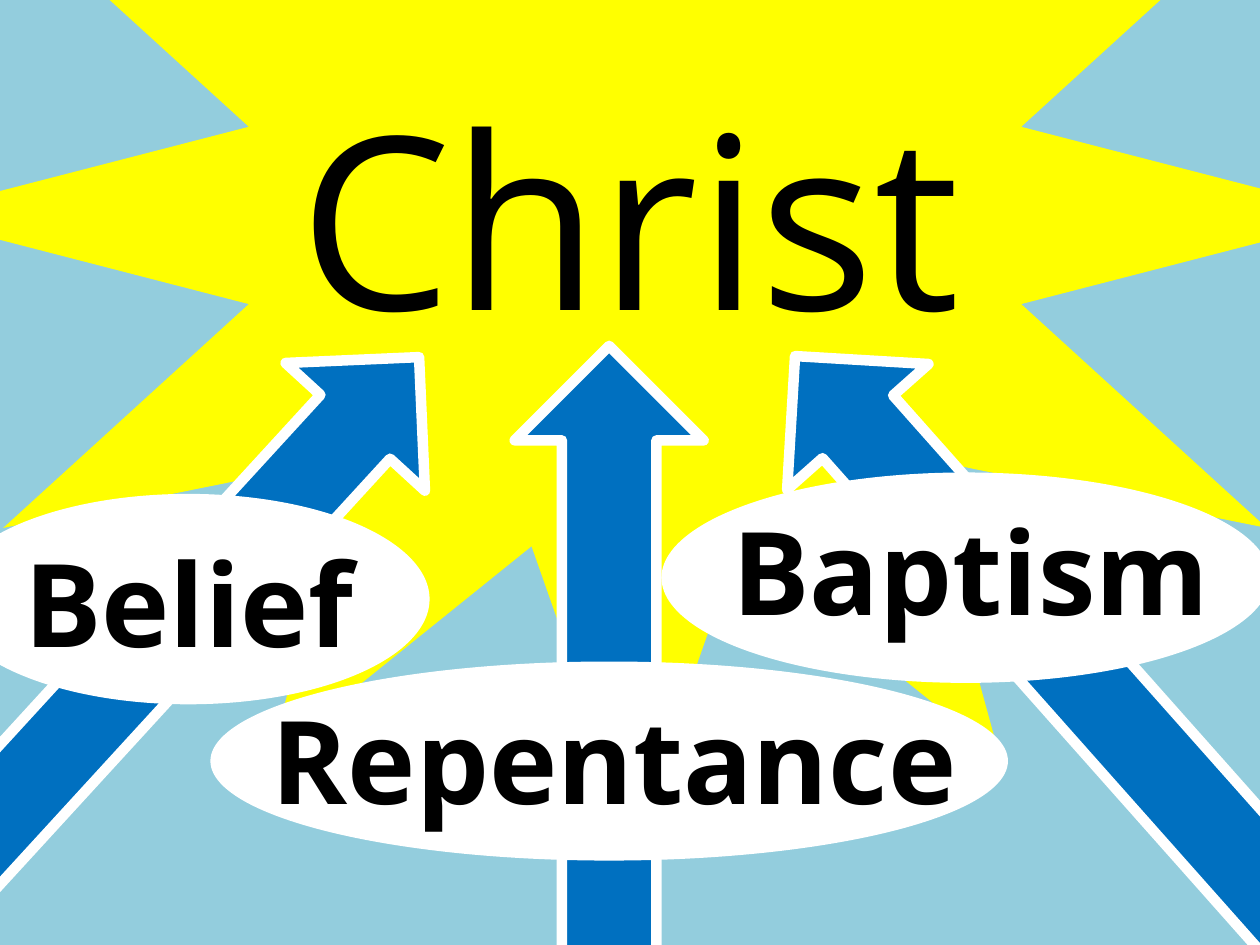
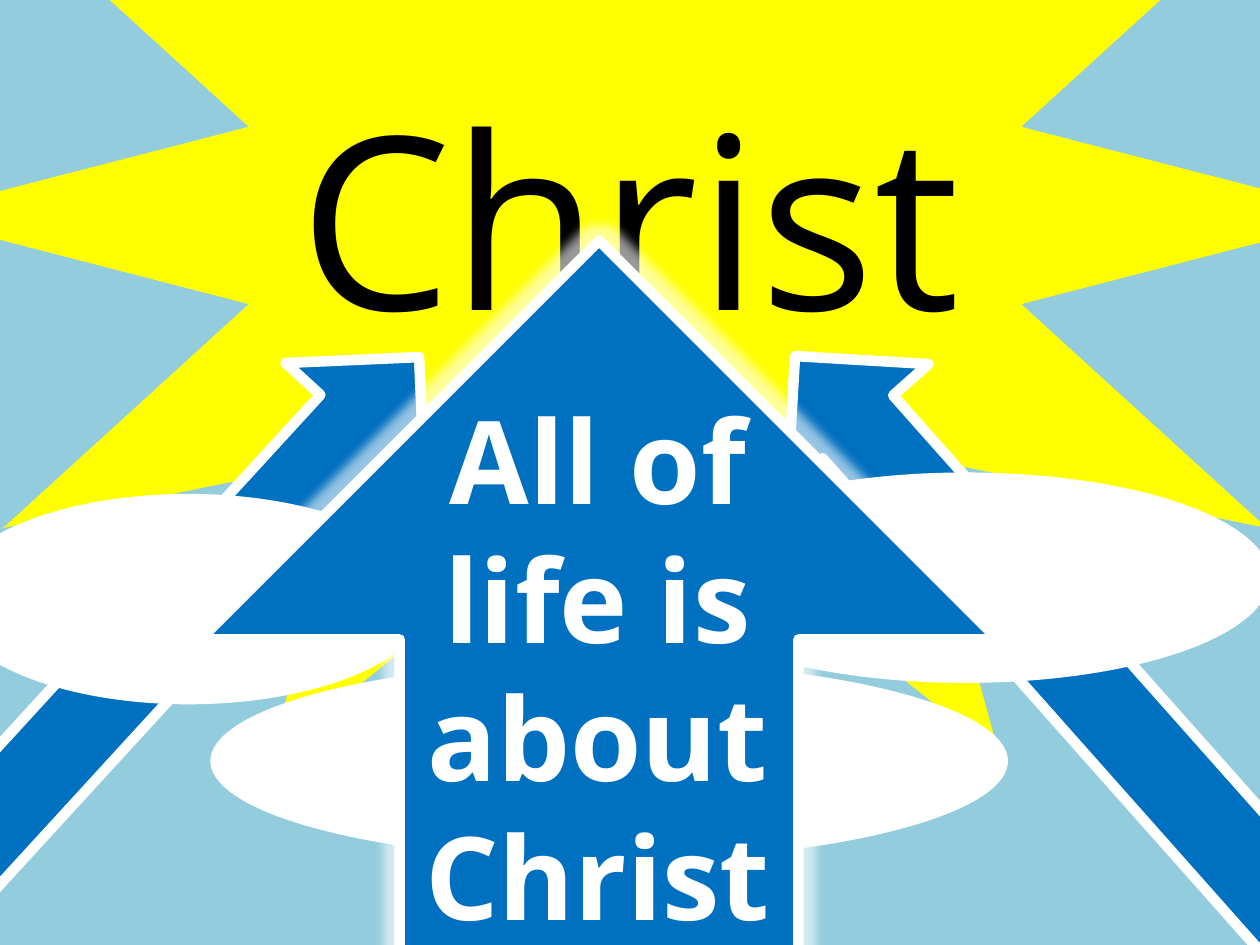
from dataclasses import dataclass

from lxml import etree
from pptx import Presentation
from pptx.dml.color import RGBColor
from pptx.enum.shapes import MSO_SHAPE
from pptx.enum.text import MSO_ANCHOR, MSO_AUTO_SIZE, PP_ALIGN
from pptx.oxml.ns import qn
from pptx.shapes.autoshape import Shape
from pptx.shapes.shapetree import GroupShapes, SlideShapes
from pptx.slide import Slide
from pptx.util import Inches, Pt

COLOURS = {
    "sky": "93CDDD",
    "sun": "FFFF00",
    "arrow": "0070C0",
    "white": "FFFFFF",
    "black": "000000",
}
FONT = "Open Sans"
TITLE_ONLY = 5
Canvas = SlideShapes | GroupShapes


@dataclass(frozen=True)
class Box:
    left: float
    top: float
    width: float
    height: float

    def lengths(self) -> tuple:
        return tuple(Inches(n) for n in (self.left, self.top, self.width, self.height))


@dataclass(frozen=True)
class Arrow:
    box: Box
    rotation: float


@dataclass(frozen=True)
class Step:
    """One of the ways to Christ: an arrow with an oval label on it."""
    word: str
    arrow: Arrow
    oval: Box
    label: Box


STEPS = (
    Step("Belief", Arrow(Box(-1.39, 4.16, 5.63, 1.5), 312.5),
         Box(-0.42, 3.92, 3.83, 1.67), Box(-1.25, 4.17, 5.5, 1.21)),
    Step("Repentance", Arrow(Box(2.21, 4.62, 5.25, 1.5), 270),
         Box(1.67, 5.25, 6.33, 1.58), Box(1.5, 5.42, 6.75, 1.21)),
    Step("Baptism", Arrow(Box(5.23, 4.48, 6.43, 1.5), 228.4),
         Box(5.25, 3.75, 4.83, 1.67), Box(4.33, 3.92, 6.75, 1.21)),
)
SUMMARY_ARROW = Arrow(Box(0.67, 2.83, 8.17, 6.33), 270)
SUMMARY_LABEL = Box(3.08, 3.04, 3.33, 4.54)


def colour(name: str) -> RGBColor:
    return RGBColor.from_string(COLOURS[name])


def add_filled(canvas: Canvas, kind: MSO_SHAPE, box: Box, fill: str) -> Shape:
    shape = canvas.add_shape(kind, *box.lengths())
    shape.shadow.inherit = False
    shape.fill.solid()
    shape.fill.fore_color.rgb = colour(fill)
    shape.line.fill.background()
    return shape


def add_arrow(canvas: Canvas, arrow: Arrow) -> Shape:
    shape = add_filled(canvas, MSO_SHAPE.RIGHT_ARROW, arrow.box, "arrow")
    shape.rotation = arrow.rotation
    shape.line.color.rgb = colour("white")
    shape.line.width = Pt(6)
    return shape


def add_glow(shape: Shape) -> None:
    effects = shape._element.spPr.find(qn("a:effectLst"))
    glow = etree.SubElement(effects, qn("a:glow"), rad=str(Pt(11)))
    tint = etree.SubElement(glow, qn("a:srgbClr"), val=COLOURS["white"])
    etree.SubElement(tint, qn("a:alpha"), val="60000")


def write(shape: Shape, text: str, size: float, ink: str, bold: bool) -> None:
    frame = shape.text_frame
    frame_format = {
        "word_wrap": True,
        "auto_size": MSO_AUTO_SIZE.SHAPE_TO_FIT_TEXT,
        "vertical_anchor": MSO_ANCHOR.TOP,
    }
    for name, value in frame_format.items():
        setattr(frame, name, value)
    para = frame.paragraphs[0]
    para.alignment = PP_ALIGN.CENTER
    span = para.add_run()
    span.text = text
    for name, value in {"name": FONT, "size": Pt(size), "bold": bold}.items():
        setattr(span.font, name, value)
    span.font.color.rgb = colour(ink)


def add_label(canvas: Canvas, box: Box, text: str, ink: str) -> None:
    write(canvas.add_textbox(*box.lengths()), text, 66, ink, True)


def add_oval(canvas: Canvas, box: Box) -> None:
    add_filled(canvas, MSO_SHAPE.OVAL, box, "white")


def add_scene(deck: Presentation) -> Slide:
    """Add a slide with the sky and the sun burst."""
    page = deck.slides.add_slide(deck.slide_layouts[TITLE_ONLY])
    add_filled(page.shapes, MSO_SHAPE.RECTANGLE, Box(0, 0, 10, 7.5), "sky")
    sun = add_filled(page.shapes, MSO_SHAPE.STAR_12_POINT,
                     Box(-0.75, -3.25, 11.58, 9.92), "sun")
    sun.adjustments[0] = 0.274
    return page


def place_title(page: Slide) -> None:
    """Write the title and bring it in front of all shapes drawn so far."""
    title = page.shapes.title
    lengths = Box(0, 0.5, 10, 2.42).lengths()
    for name, value in zip(("left", "top", "width", "height"), lengths):
        setattr(title, name, value)
    write(title, "Christ", 138, "black", False)
    page.shapes._spTree.append(title._element)


def build_steps(deck: Presentation) -> None:
    page = add_scene(deck)
    place_title(page)
    for step in STEPS:
        group = page.shapes.add_group_shape().shapes
        add_arrow(group, step.arrow)
        add_oval(group, step.oval)
        add_label(group, step.label, step.word, "black")


def build_summary(deck: Presentation) -> None:
    page = add_scene(deck)
    for step in STEPS:
        add_arrow(page.shapes, step.arrow)
    place_title(page)
    for step in STEPS:
        add_oval(page.shapes, step.oval)
    group = page.shapes.add_group_shape().shapes
    add_glow(add_arrow(group, SUMMARY_ARROW))
    add_label(group, SUMMARY_LABEL, "All of life is about Christ", "white")


def main() -> None:
    deck = Presentation()
    deck.slide_width = Inches(10)
    deck.slide_height = Inches(7.5)
    build_steps(deck)
    build_summary(deck)
    deck.save("out.pptx")


if __name__ == "__main__":
    main()
